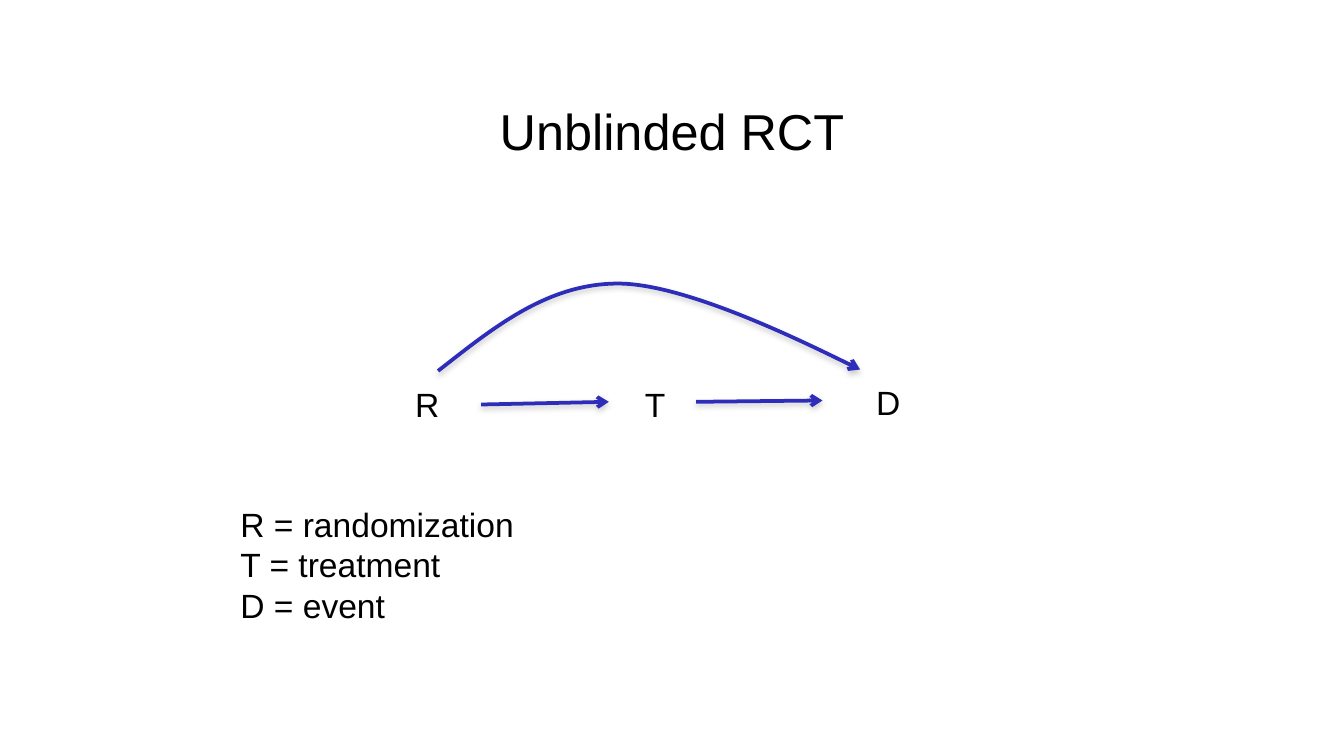
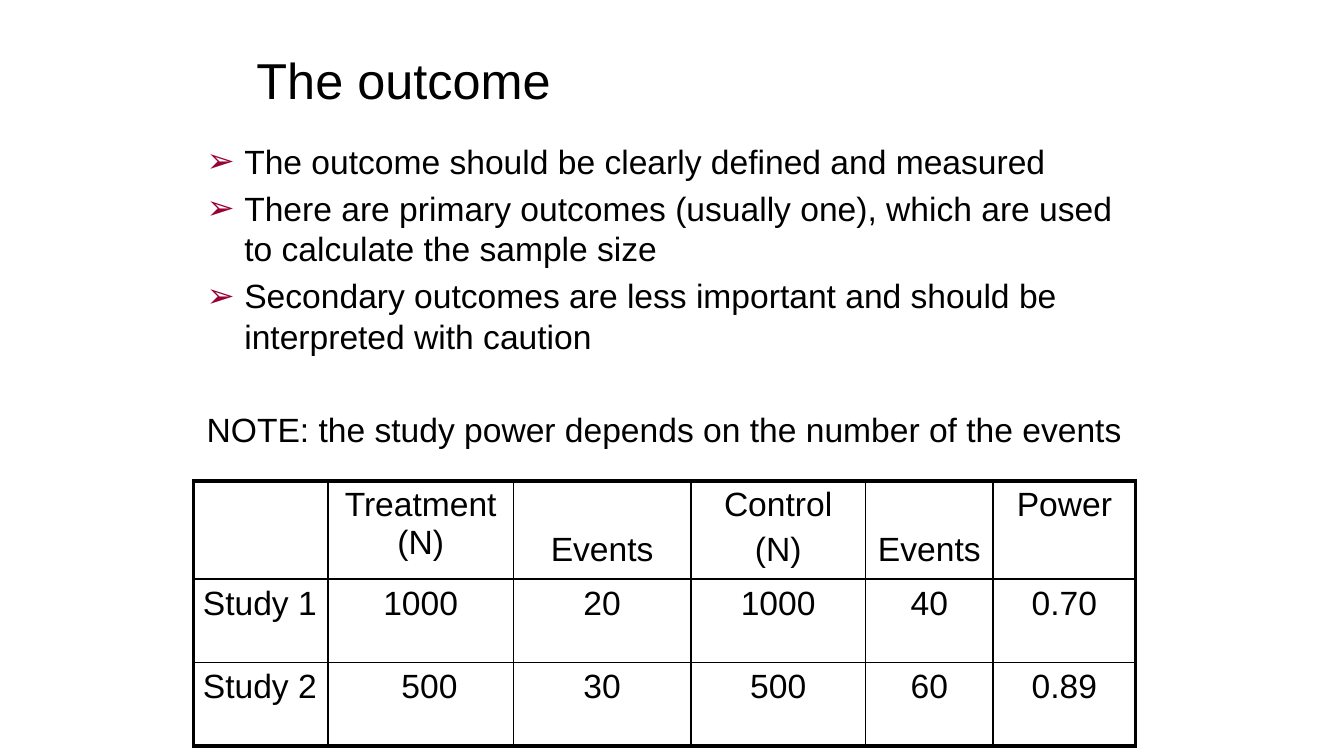
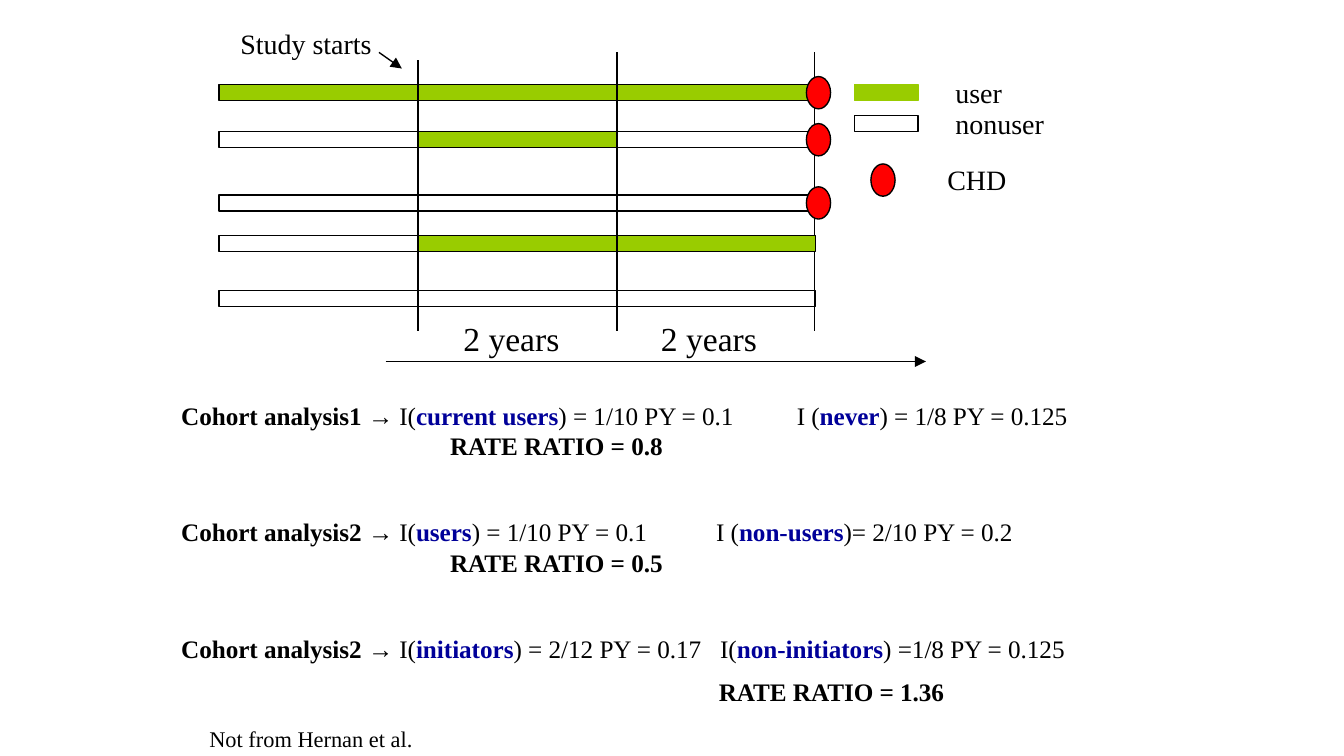
"""Build three slides on trial design, outcomes and cohort analyses."""
from dataclasses import dataclass
from typing import Optional

from lxml.etree import SubElement
from pptx import Presentation
from pptx.dml.color import RGBColor
from pptx.enum.shapes import MSO_CONNECTOR, MSO_SHAPE
from pptx.enum.text import MSO_ANCHOR, MSO_AUTO_SIZE, PP_ALIGN
from pptx.oxml.ns import qn
from pptx.util import Inches, Pt

BLACK = "000000"
ARROW_BLUE = "2D2DB9"
GROUP_BLUE = "000099"
BULLET_RED = "990033"
USER_GREEN = "99CC00"
EVENT_RED = "FF0000"
SANS = "Arial"
SERIF = "Times New Roman"
THIN, THICK = 1, 2.25


@dataclass
class Label:
    text: str
    left: float
    top: float
    width: float
    height: float
    size: float = 18
    font: str = SANS


@dataclass
class Line:
    start: tuple[float, float]
    end: tuple[float, float]
    color: str = BLACK
    width: float = 0.75
    arrowhead: Optional[str] = None
    shadow: bool = False


@dataclass
class Participant:
    top: float
    usage: str
    has_event: bool


@dataclass
class CohortAnalysis:
    heading: str
    first_group: str
    first_rate: str
    second_group: str
    second_rate: str
    ratio: str
    second_left: float
    ratio_left: float
    ratio_gap: float


CAUSAL_NODES = [
    Label("R", 2.99, 2.81, 0.59, 0.4),
    Label("T", 4.7, 2.81, 0.59, 0.4),
    Label("D", 6.42, 2.79, 0.59, 0.4),
]
CAUSAL_ARROWS = [
    Line((3.58, 3.01), (4.53, 2.99), ARROW_BLUE, 2, "arrow", True),
    Line((5.18, 2.99), (6.12, 2.98), ARROW_BLUE, 2, "arrow", True),
]
DIRECT_EFFECT = [(3.26, 2.76), (3.67, 2.44), (4.07, 2.11), (4.6, 2.11),
                 (5.12, 2.11), (6.4, 2.75), (6.4, 2.75)]
NODE_KEY = Label("R = randomization\nT = treatment\nD = event", 1.69, 3.7, 6.56, 1.01)

OUTCOME_POINTS = [
    "The outcome should be clearly defined and measured",
    "There are primary outcomes (usually one), which are used to calculate the sample size",
    "Secondary outcomes are less important and should be interpreted with caution",
]
POWER_NOTE = "NOTE: the study power depends on the number of the events"
POWER_ROWS = [
    ["", "Treatment (N)", "Events", "Control\n(N)", "Events", "Power"],
    ["Study 1", "1000", "20", "1000", "40", "0.70"],
    ["Study 2", "500", "30", "500", "60", "0.89"],
]
POWER_WIDTHS = [1, 1.38, 1.32, 1.3, 0.95, 1.06]
POWER_HEIGHTS = [0.73, 0.62, 0.62]

PERIOD_LEFT, PERIOD_WIDTH, BAR_HEIGHT = 1.63, 1.48, 0.12
EVENT_WIDTH, EVENT_HEIGHT = 0.18, 0.24
PARTICIPANTS = [
    Participant(0.63, "UUU", True),
    Participant(0.98, "NUN", True),
    Participant(1.45, "NNN", True),
    Participant(1.75, "NUU", False),
    Participant(2.16, "NNN", False),
]
TIMELINE = [
    Line((3.11, 0.45), (3.11, 2.46)),
    Line((4.59, 0.39), (4.59, 2.46)),
    Line((6.06, 0.39), (6.06, 2.46)),
    Line((2.87, 2.69), (6.89, 2.69), arrowhead="triangle"),
    Line((2.82, 0.39), (2.99, 0.51), arrowhead="triangle"),
]
COHORT_LABELS = [
    Label("user", 7.01, 0.51, 1.18, 0.35, 15, SERIF),
    Label("nonuser", 7.01, 0.74, 1.18, 0.35, 15, SERIF),
    Label("CHD", 6.95, 1.16, 1.18, 0.35, 15, SERIF),
    Label("2 years", 3.35, 2.32, 1.24, 0.4, 18, SERIF),
    Label("2 years", 4.82, 2.32, 1.24, 0.4, 18, SERIF),
    Label("Study starts", 1.69, 0.15, 1.36, 0.35, 15, SERIF),
    Label("Not from Hernan et al.", 1.46, 5.35, 2.36, 0.3, 12, SERIF),
]
ANALYSES = [
    CohortAnalysis("Cohort analysis1 ", "current users", ") = 1/10 PY = 0.1\tI (",
                   "never", ") = 1/8 PY = 0.125", "RATE RATIO = 0.8", 4.58, 2, 0),
    CohortAnalysis("Cohort analysis2 ", "users", ") = 1/10 PY = 0.1\tI (",
                   "non-users", ")= 2/10 PY = 0.2", "RATE RATIO = 0.5", 3.98, 2, 0),
    CohortAnalysis("Cohort analysis2 ", "initiators", ") = 2/12 PY = 0.17\tI(",
                   "non-initiators", ") =1/8 PY = 0.125", "RATE RATIO = 1.36", 4.01, 4, 6.75),
]


def rgb(color: str) -> RGBColor:
    """Turn a hex string into a colour."""
    return RGBColor.from_string(color)


def format_run(run, size: float, font: str, color: str = BLACK, bold: bool = False) -> None:
    """Set the look of one run."""
    run.font.size = Pt(size)
    run.font.name = font
    run.font.color.rgb = rgb(color)
    run.font.bold = bold


def format_frame(text_frame, size: float, font: str) -> None:
    """Give every run of a text frame the same look."""
    for paragraph in text_frame.paragraphs:
        for run in paragraph.runs:
            format_run(run, size, font)


def add_label(slide, label: Label):
    """Add a wrapped text box and return it."""
    box = slide.shapes.add_textbox(Inches(label.left), Inches(label.top),
                                   Inches(label.width), Inches(label.height))
    box.text_frame.word_wrap = True
    box.text_frame.auto_size = MSO_AUTO_SIZE.SHAPE_TO_FIT_TEXT
    box.text_frame.text = label.text
    format_frame(box.text_frame, label.size, label.font)
    return box


def add_title(slide, text: str, left: float, top: float, width: float, alignment) -> None:
    """Add the slide title."""
    frame = add_label(slide, Label(text, left, top, width, 0.94, 27)).text_frame
    frame.auto_size = MSO_AUTO_SIZE.NONE
    frame.vertical_anchor = MSO_ANCHOR.MIDDLE
    frame.paragraphs[0].alignment = alignment


def style_line(shape, color: str, width: float, arrowhead: Optional[str], shadow: bool) -> None:
    """Set stroke, arrowhead and shadow of a connector or open outline."""
    shape.line.color.rgb = rgb(color)
    shape.line.width = Pt(width)
    properties = shape.element.spPr
    if arrowhead:
        SubElement(properties.find(qn("a:ln")), qn("a:tailEnd"), type=arrowhead)
    effects = SubElement(properties, qn("a:effectLst"))
    if shadow:
        outer = SubElement(effects, qn("a:outerShdw"), blurRad=str(Pt(3.1)),
                           dist=str(Pt(1.6)), dir="5400000", rotWithShape="0")
        gray = SubElement(outer, qn("a:srgbClr"), val="808080")
        SubElement(gray, qn("a:alpha"), val="38000")


def add_line(slide, line: Line) -> None:
    """Add a straight connector."""
    connector = slide.shapes.add_connector(MSO_CONNECTOR.STRAIGHT,
                                           *map(Inches, line.start + line.end))
    style_line(connector, line.color, line.width, line.arrowhead, line.shadow)


def add_curved_arrow(slide, points: list[tuple[float, float]]) -> None:
    """Add an arrow along cubic curves given by a start and triples of points."""
    start, *rest = [(Inches(x), Inches(y)) for x, y in points]
    builder = slide.shapes.build_freeform(*start)
    builder.add_line_segments(rest, close=False)
    curve = builder.convert_to_shape()
    segments = list(curve.element.iter(qn("a:lnTo")))
    outline = segments[0].getparent()
    for first in range(0, len(segments), 3):
        cubic = SubElement(outline, qn("a:cubicBezTo"))
        for segment in segments[first:first + 3]:
            cubic.append(segment[0])
            outline.remove(segment)
    curve.fill.background()
    style_line(curve, ARROW_BLUE, 2, "arrow", True)


def add_preset(slide, kind, left: float, top: float, width: float, height: float,
               fill: Optional[str], outline: str = BLACK) -> None:
    """Add a thinly outlined preset shape."""
    shape = slide.shapes.add_shape(kind, Inches(left), Inches(top), Inches(width), Inches(height))
    shape.shadow.inherit = False
    if fill:
        shape.fill.solid()
        shape.fill.fore_color.rgb = rgb(fill)
    else:
        shape.fill.background()
    shape.line.color.rgb = rgb(outline)
    shape.line.width = Pt(0.75)


def add_event(slide, left: float, top: float) -> None:
    """Add the marker of a disease event."""
    add_preset(slide, MSO_SHAPE.OVAL, left, top, EVENT_WIDTH, EVENT_HEIGHT, EVENT_RED)


def set_borders(cell, widths: dict[str, float]) -> None:
    """Draw the black borders of a table cell."""
    properties = cell._tc.get_or_add_tcPr()
    for side, width in widths.items():
        border = SubElement(properties, qn(f"a:ln{side}"), w=str(Pt(width)))
        SubElement(SubElement(border, qn("a:solidFill")), qn("a:srgbClr"), val=BLACK)


def add_power_table(slide) -> None:
    """Add the table of study sizes, events and power."""
    last_row, last_column = len(POWER_ROWS) - 1, len(POWER_WIDTHS) - 1
    table = slide.shapes.add_table(last_row + 1, last_column + 1, Inches(1.44), Inches(3.58),
                                   Inches(sum(POWER_WIDTHS)), Inches(sum(POWER_HEIGHTS))).table
    table.first_row = table.horz_banding = False
    for column, width in zip(table.columns, POWER_WIDTHS):
        column.width = Inches(width)
    for row, height in zip(table.rows, POWER_HEIGHTS):
        row.height = Inches(height)
    for row_index, row in enumerate(POWER_ROWS):
        for column_index, text in enumerate(row):
            cell = table.cell(row_index, column_index)
            set_borders(cell, {
                "L": THICK if column_index == 0 else THIN,
                "R": THICK if column_index == last_column else THIN,
                "T": THICK if row_index == 0 else THIN,
                "B": THICK if row_index == last_row else THIN,
            })
            cell.fill.background()
            cell.margin_left = cell.margin_right = Inches(0.07)
            cell.margin_top = cell.margin_bottom = Inches(0.04)
            cell.text_frame.text = text
            format_frame(cell.text_frame, 18, SANS)
            for paragraph in cell.text_frame.paragraphs:
                paragraph.space_before = Pt(3.6)
                named = row_index > 0 and column_index == 0
                paragraph.alignment = PP_ALIGN.LEFT if named else PP_ALIGN.CENTER
            if text == "Events":
                cell.vertical_anchor = MSO_ANCHOR.BOTTOM
                cell.margin_bottom = Inches(0.08)
    table.cell(last_row, 1).margin_left = Inches(0.2)


def add_outcome_points(slide) -> None:
    """Add the bulleted points and the note below them."""
    text = "\n".join(OUTCOME_POINTS + [POWER_NOTE])
    frame = add_label(slide, Label(text, 1.44, 1, 7.06, 3)).text_frame
    frame.auto_size = MSO_AUTO_SIZE.NONE
    for paragraph in frame.paragraphs:
        is_note = paragraph.text == POWER_NOTE
        paragraph.space_before = Pt(28.5 if is_note else 3.6)
        properties = paragraph._p.get_or_add_pPr()
        properties.set("marL", str(Inches(0.28)))
        properties.set("indent", str(Inches(-0.28)))
        if is_note:
            SubElement(properties, qn("a:buNone"))
        else:
            color = SubElement(properties, qn("a:buClr"))
            SubElement(color, qn("a:srgbClr"), val=BULLET_RED)
            SubElement(properties, qn("a:buFont"), typeface=SANS)
            SubElement(properties, qn("a:buChar"), char="➢")


def add_analyses(slide) -> None:
    """Add the rates and rate ratio of each cohort analysis."""
    frame = add_label(slide, Label("", 1.25, 2.93, 7.65, 2.83, 13.5, SERIF)).text_frame
    for index, analysis in enumerate(ANALYSES):
        rates = frame.add_paragraph() if index else frame.paragraphs[0]
        rates.space_before = Pt(30 if index else 0)
        tabs = SubElement(rates._p.get_or_add_pPr(), qn("a:tabLst"))
        SubElement(tabs, qn("a:tab"), pos=str(Inches(analysis.second_left)), algn="l")
        for text, color, bold in [
            (analysis.heading, BLACK, True),
            ("→ I(", BLACK, False),
            (analysis.first_group, GROUP_BLUE, True),
            (analysis.first_rate, BLACK, False),
            (analysis.second_group, GROUP_BLUE, True),
            (analysis.second_rate, BLACK, False),
        ]:
            run = rates.add_run()
            run.text = text
            format_run(run, 13.5, SERIF, color, bold)
        ratio = frame.add_paragraph()
        ratio.text = analysis.ratio
        ratio.space_before = Pt(analysis.ratio_gap)
        ratio._p.get_or_add_pPr().set("marL", str(Inches(analysis.ratio_left)))
        format_run(ratio.runs[0], 13.5, SERIF, bold=True)


def build_trial_slide(slide) -> None:
    """Draw the causal diagram of an unblinded trial."""
    add_title(slide, "Unblinded RCT", 0.75, 0.5, 8.5, PP_ALIGN.CENTER)
    for label in CAUSAL_NODES + [NODE_KEY]:
        add_label(slide, label)
    for arrow in CAUSAL_ARROWS:
        add_line(slide, arrow)
    add_curved_arrow(slide, DIRECT_EFFECT)


def build_outcome_slide(slide) -> None:
    """Draw the outcome points and the power table."""
    add_title(slide, "The outcome", 1.81, 0.12, 6.38, PP_ALIGN.LEFT)
    add_outcome_points(slide)
    add_power_table(slide)


def build_cohort_slide(slide) -> None:
    """Draw the follow-up of participants and the cohort analyses."""
    for line in TIMELINE:
        add_line(slide, line)
    for participant in PARTICIPANTS:
        for period, usage in enumerate(participant.usage):
            add_preset(slide, MSO_SHAPE.RECTANGLE, PERIOD_LEFT + period * PERIOD_WIDTH,
                       participant.top, PERIOD_WIDTH, BAR_HEIGHT,
                       USER_GREEN if usage == "U" else None)
        if participant.has_event:
            add_event(slide, 6, participant.top - (EVENT_HEIGHT - BAR_HEIGHT) / 2)
    for top, fill, outline in [(0.63, USER_GREEN, USER_GREEN), (0.86, None, BLACK)]:
        add_preset(slide, MSO_SHAPE.RECTANGLE, 6.36, top, 0.47, BAR_HEIGHT, fill, outline)
    add_event(slide, 6.48, 1.22)
    for label in COHORT_LABELS:
        add_label(slide, label)
    add_analyses(slide)


def main() -> None:
    """Build and save the presentation."""
    presentation = Presentation()
    presentation.slide_width = Inches(10)
    presentation.slide_height = Inches(10 * 9 / 16)
    for build in (build_trial_slide, build_outcome_slide, build_cohort_slide):
        build(presentation.slides.add_slide(presentation.slide_layouts[6]))
    presentation.save("out.pptx")


if __name__ == "__main__":
    main()
